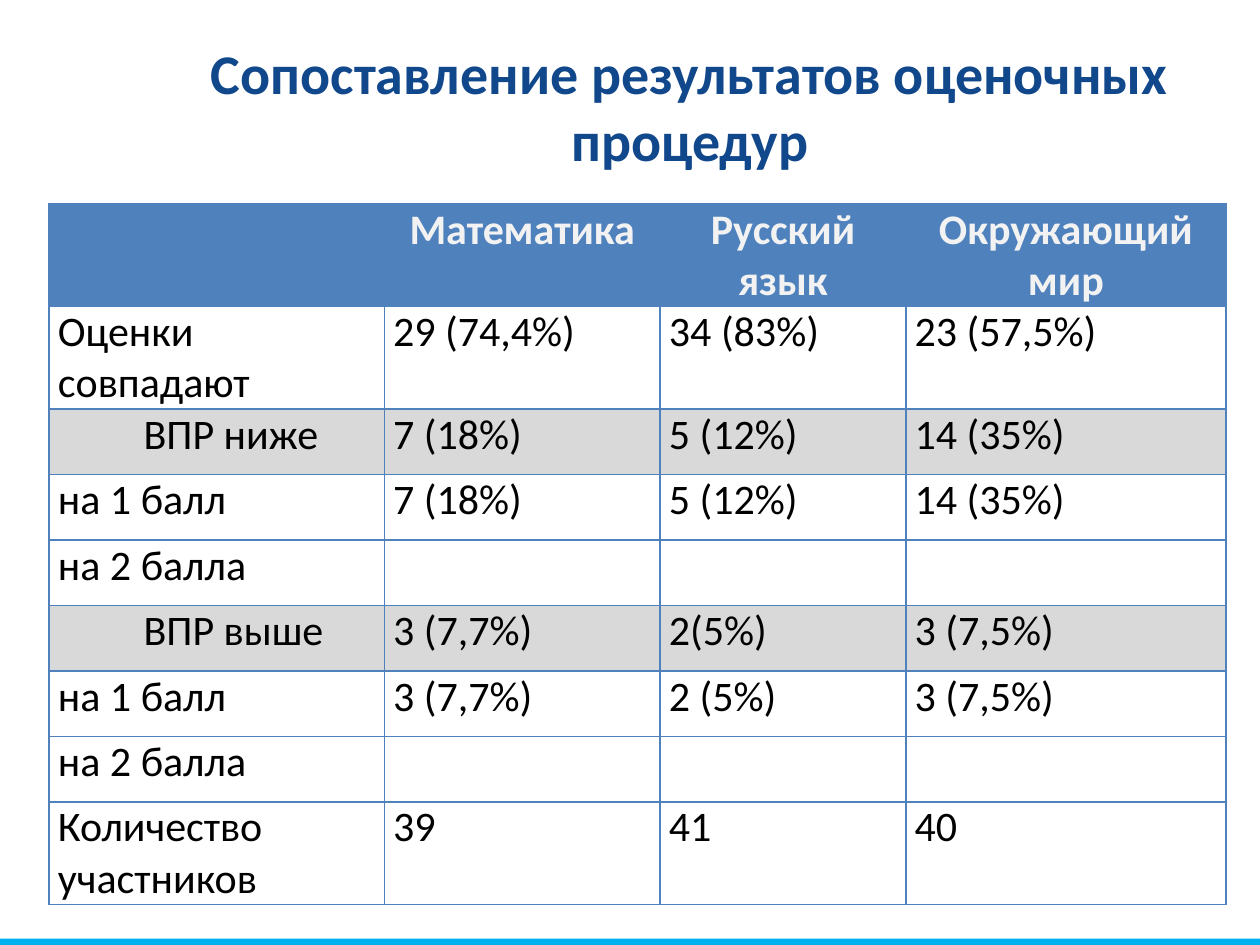
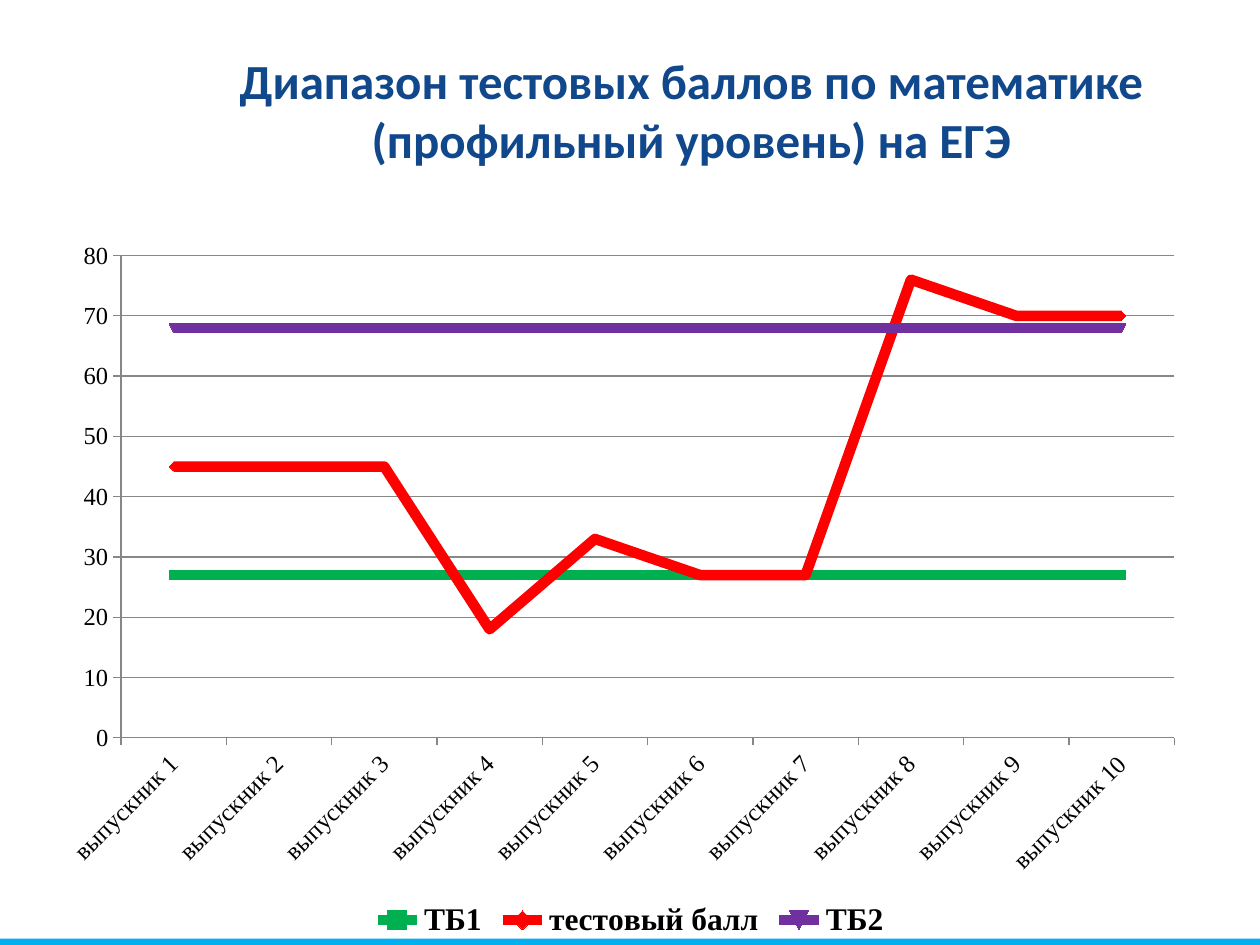
from dataclasses import dataclass
from typing import Any

from lxml import etree
from pptx import Presentation
from pptx.chart.data import CategoryChartData
from pptx.dml.color import RGBColor
from pptx.enum.chart import XL_CHART_TYPE, XL_LEGEND_POSITION, XL_TICK_MARK
from pptx.enum.shapes import MSO_SHAPE
from pptx.enum.text import MSO_ANCHOR, MSO_AUTO_SIZE, PP_ALIGN
from pptx.oxml.ns import qn
from pptx.util import Inches, Pt

RECT = MSO_SHAPE.RECTANGLE
LINES = XL_CHART_TYPE.LINE_MARKERS
BELOW = XL_LEGEND_POSITION.BOTTOM
OUT = XL_TICK_MARK.OUTSIDE
TOP, MIDDLE = MSO_ANCHOR.TOP, MSO_ANCHOR.MIDDLE
FIXED = MSO_AUTO_SIZE.NONE
CENTER, JUSTIFY = PP_ALIGN.CENTER, PP_ALIGN.JUSTIFY

WIDE, HIGH = Inches(10), Inches(7.5)
COLS, ROWS = 100, 75
SANS, SERIF = "Calibri", "Times New Roman"
COLORS = {
    "title": "11478B", "band": "00B0F0", "head": "4F81BD", "pale": "F2F2F2",
    "gray": "D9D9D9", "black": "000000", "grid": "878787",
    "green": "00B050", "red": "FF0000", "plum": "7030A0",
}
PAD, INDENT = Inches(0.07), Inches(0.75)
TITLE = {"name": SANS, "bold": True}
HEAD = {"name": SANS, "size": Pt(24), "bold": True}
BODY = {"name": SANS, "size": Pt(24), "bold": False}

WIDTHS = [26.6, 21.9, 19.5, 25.4]
TALL, SHORT = 7.7, 5.2


@dataclass(frozen=True)
class Box:
    """A place on the slide grid, in columns and rows."""
    col: float
    row: float
    wide: float
    high: float

    def place(self) -> tuple[int, int, int, int]:
        """Give left, top, width and height."""
        return across(self.col), down(self.row), across(self.wide), down(self.high)


@dataclass(frozen=True)
class Row:
    """One row of the table."""
    cells: tuple[str, ...]
    high: float = SHORT
    kind: str = "plain"


@dataclass(frozen=True)
class Series:
    """One line of the chart."""
    name: str
    scores: tuple[int, ...]
    color: str


GRADES = [
    Row(("", "Математика", "Русский язык", "Окружающий мир"), TALL, "head"),
    Row(("Оценки совпадают", "29 (74,4%)", "34 (83%)", "23 (57,5%)"), TALL),
    Row(("ВПР ниже", "7 (18%)", "5 (12%)", "14 (35%)"), kind="group"),
    Row(("на 1 балл", "7 (18%)", "5 (12%)", "14 (35%)")),
    Row(("на 2 балла", "", "", "")),
    Row(("ВПР выше", "3 (7,7%)", "2(5%)", "3 (7,5%)"), kind="group"),
    Row(("на 1 балл", "3 (7,7%)", "2 (5%)", "3 (7,5%)")),
    Row(("на 2 балла", "", "", "")),
    Row(("Количество участников", "39", "41", "40"), TALL),
]
PUPILS = 10
SCORES = [
    Series("ТБ1", (27,) * PUPILS, "green"),
    Series("тестовый балл", (45, 45, 45, 18, 33, 27, 27, 76, 70, 70), "red"),
    Series("ТБ2", (68,) * PUPILS, "plum"),
]
PLOT = {"x": 0.05, "y": 0.03, "w": 0.93, "h": 0.68}


def across(cols: float) -> int:
    """Turn grid columns into a length."""
    return round(WIDE * cols / COLS)


def down(rows: float) -> int:
    """Turn grid rows into a length."""
    return round(HIGH * rows / ROWS)


def tint(name: str) -> RGBColor:
    """Look up a colour."""
    return RGBColor.from_string(COLORS[name])


def assign(thing: Any, values: dict[str, Any]) -> None:
    """Set each attribute named in the dict."""
    for key, value in values.items():
        setattr(thing, key, value)


def style(font: Any, values: dict[str, Any], color: str) -> None:
    """Format a font."""
    assign(font, values)
    font.color.rgb = tint(color)


def paint(fill: Any, color: str) -> None:
    """Make a fill solid."""
    fill.solid()
    fill.fore_color.rgb = tint(color)


def stroke(line: Any, color: str, width: float) -> None:
    """Format a line."""
    paint(line.fill, color)
    line.width = Pt(width)


def add_page(deck: Any, text: str, box: Box, size: int, anchor: Any) -> Any:
    """Add a slide with its title."""
    page = deck.slides.add_slide(deck.slide_layouts[5])
    title = page.shapes.title
    assign(title, dict(zip(("left", "top", "width", "height"), box.place())))
    frame = title.text_frame
    frame.text = text
    assign(frame, {"word_wrap": True, "auto_size": FIXED, "vertical_anchor": anchor})
    part = frame.paragraphs[0]
    part.alignment = CENTER
    style(part.runs[0].font, {**TITLE, "size": Pt(size)}, "title")
    return page


def add_band(deck: Any, page: Any) -> None:
    """Draw the bottom band and hand it to the master."""
    band = page.shapes.add_shape(RECT, *Box(0, 74.5, COLS, 0.5).place())
    band.shadow.inherit = False
    paint(band.fill, "band")
    band.line.fill.background()
    band.element[0][0].set("id", "99")
    deck.slide_master.shapes.element.append(band.element)


def add_rules(frame: Any) -> None:
    """Draw the borders of every cell."""
    for props in frame.element.iter(qn("a:tcPr")):
        for spot, side in enumerate(("lnL", "lnR", "lnT", "lnB")):
            line = etree.Element(qn(f"a:{side}"), w=str(Pt(1)))
            fill = etree.SubElement(line, qn("a:solidFill"))
            etree.SubElement(fill, qn("a:srgbClr"), val=COLORS["head"])
            props.insert(spot, line)


def fill_cell(cell: Any, text: str, kind: str, first: bool) -> None:
    """Write and format one cell."""
    inset = INDENT if first and kind == "group" else PAD
    assign(cell, {"margin_left": inset, "margin_right": PAD,
                  "margin_top": 0, "margin_bottom": 0, "text": text})
    shade = {"head": "head", "group": "gray"}.get(kind)
    if shade:
        paint(cell.fill, shade)
    else:
        cell.fill.background()
    part = cell.text_frame.paragraphs[0]
    is_head = kind == "head"
    part.alignment = CENTER if is_head else JUSTIFY
    style(part.font, HEAD if is_head else BODY, "pale" if is_head else "black")
    for run in part.runs:
        style(run.font, HEAD if is_head else BODY, "pale" if is_head else "black")


def add_grades(page: Any) -> None:
    """Add the table of grades."""
    box = Box(3.9, 16.2, sum(WIDTHS), sum(row.high for row in GRADES))
    frame = page.shapes.add_table(len(GRADES), len(WIDTHS), *box.place())
    table = frame.table
    assign(table, {"first_row": False, "horz_banding": False})
    for col, wide in zip(table.columns, WIDTHS):
        col.width = across(wide)
    for line, row in zip(table.rows, GRADES):
        line.height = down(row.high)
        for spot, (cell, text) in enumerate(zip(line.cells, row.cells)):
            fill_cell(cell, text, row.kind, spot == 0)
    add_rules(frame)


def set_plot(chart: Any) -> None:
    """Fix the inner plot area."""
    area = chart.element.find(".//" + qn("c:plotArea"))
    for old in area.findall(qn("c:layout")):
        area.remove(old)
    layout = etree.Element(qn("c:layout"))
    area.insert(0, layout)
    manual = etree.SubElement(layout, qn("c:manualLayout"))
    modes = {"layoutTarget": "inner", "xMode": "edge", "yMode": "edge"}
    for key, value in {**modes, **PLOT}.items():
        etree.SubElement(manual, qn(f"c:{key}"), val=str(value))


def add_scores(page: Any) -> None:
    """Add the line chart of scores."""
    data = CategoryChartData()
    data.categories = [f"выпускник {n}" for n in range(1, PUPILS + 1)]
    for item in SCORES:
        data.add_series(item.name, item.scores)
    box = Box(5.1, 18.6, 89.9, 56.3)
    chart = page.shapes.add_chart(LINES, *box.place(), data).chart
    assign(chart, {"has_title": False, "has_legend": True})
    style(chart.font, {"name": SERIF, "size": Pt(14)}, "black")
    assign(chart.legend, {"position": BELOW, "include_in_layout": False})
    style(chart.legend.font, {"name": SERIF, "size": Pt(18), "bold": True}, "black")
    chart.plots[0].vary_by_categories = False
    for line, item in zip(chart.plots[0].series, SCORES):
        line.smooth = False
        stroke(line.format.line, item.color, 6)
        line.marker.size = 5
        paint(line.marker.format.fill, item.color)
    for axis in (chart.category_axis, chart.value_axis):
        axis.major_tick_mark = OUT
        stroke(axis.format.line, "grid", 0.75)
    scale = chart.value_axis
    assign(scale, {"minimum_scale": 0, "maximum_scale": 80, "major_unit": 10,
                   "has_major_gridlines": True})
    stroke(scale.major_gridlines.format.line, "grid", 0.75)
    set_plot(chart)


def main() -> None:
    """Build and save the deck."""
    deck = Presentation()
    assign(deck, {"slide_width": WIDE, "slide_height": HIGH})
    page = add_page(deck, "Сопоставление результатов оценочных процедур",
                    Box(14.6, 2.9, 80.3, 11), 32, MIDDLE)
    add_band(deck, page)
    add_grades(page)
    page = add_page(deck, "Диапазон тестовых баллов по математике "
                    "(профильный уровень) на ЕГЭ",
                    Box(13, 3.5, 83.7, 12), 28, TOP)
    add_scores(page)
    deck.save("out.pptx")


if __name__ == "__main__":
    main()
